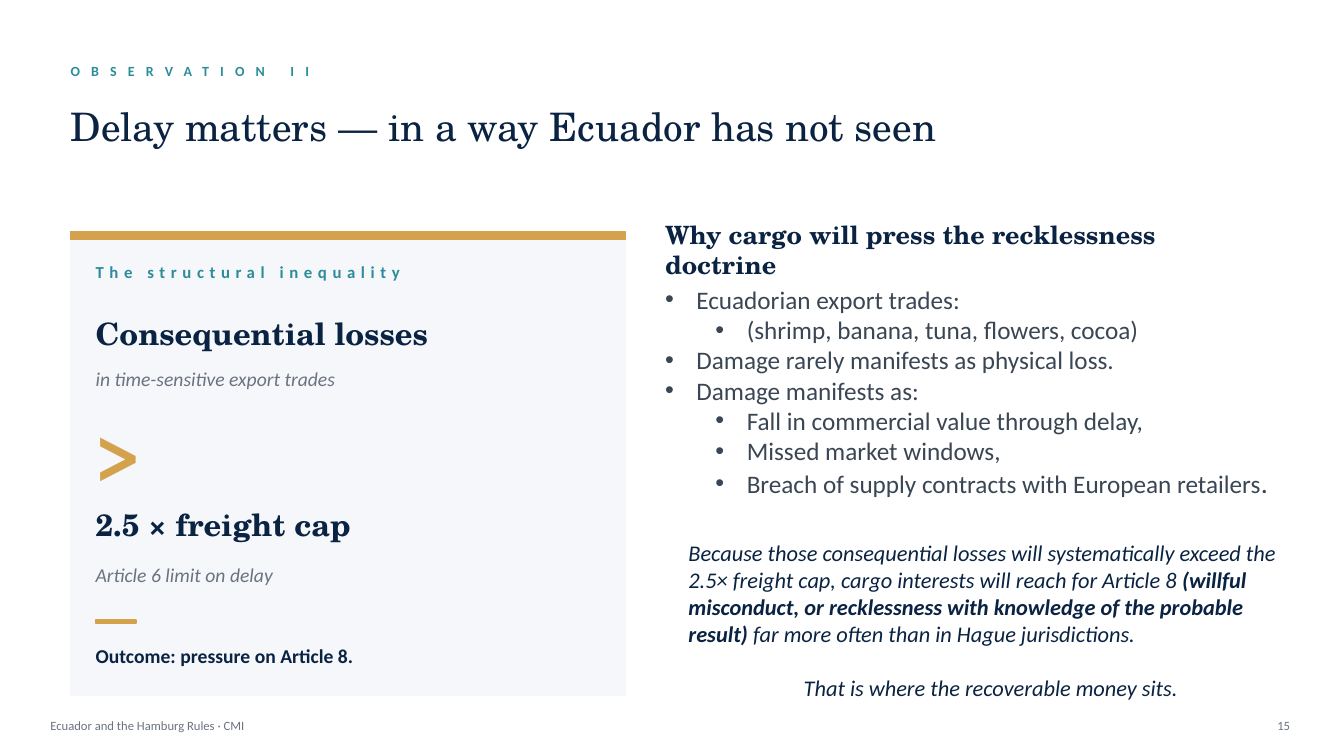
from lxml.etree import SubElement
from pptx import Presentation
from pptx.dml.color import RGBColor
from pptx.enum.shapes import MSO_SHAPE
from pptx.enum.text import MSO_ANCHOR, PP_ALIGN
from pptx.oxml.ns import qn
from pptx.util import Cm, Pt

NAVY = RGBColor(0x0A, 0x23, 0x42)
TEAL = RGBColor(0x2C, 0x8C, 0x99)
GOLD = RGBColor(0xD4, 0xA2, 0x4C)
PALE = RGBColor(0xF5, 0xF7, 0xFA)
GREY = RGBColor(0x6B, 0x72, 0x80)
SLATE = RGBColor(0x3A, 0x46, 0x54)
SERIF = "TeX Gyre Schola"
SANS = "Calibri"


def write(paragraph, text, size=14, color=NAVY, font=SANS,
          bold=False, italic=False, spacing=0):
    """Append formatted text; spacing is letter spacing in points."""
    run = paragraph.add_run()
    run.text = text
    run.font.name = font
    run.font.size = Pt(size)
    run.font.color.rgb = color
    run.font.bold = bold
    run.font.italic = italic
    if spacing:
        run.font._element.set("spc", str(spacing * 100))


class Deck:
    """Holds the current slide and the style of its elements."""

    bullet_hang = Cm(0.79)
    level_step = Cm(1.27)

    def __init__(self):
        self.presentation = Presentation()
        self.presentation.slide_width = Cm(33.87)
        self.presentation.slide_height = Cm(19.05)
        self.slide = self.presentation.slides.add_slide(
            self.presentation.slide_layouts[6])

    def frame(self, left, top, width, height, anchor=MSO_ANCHOR.TOP):
        box = self.slide.shapes.add_textbox(
            Cm(left), Cm(top), Cm(width), Cm(height))
        frame = box.text_frame
        frame.word_wrap = True
        frame.vertical_anchor = anchor
        frame.margin_left = frame.margin_right = 0
        frame.margin_top = frame.margin_bottom = 0
        return frame

    def line(self, text, left, top, width, height, align=PP_ALIGN.LEFT, **style):
        paragraph = self.frame(
            left, top, width, height, MSO_ANCHOR.MIDDLE).paragraphs[0]
        paragraph.alignment = align
        write(paragraph, text, **style)

    def block(self, left, top, width, height, color):
        block = self.slide.shapes.add_shape(
            MSO_SHAPE.RECTANGLE, Cm(left), Cm(top), Cm(width), Cm(height))
        block.shadow.inherit = False
        block.fill.solid()
        block.fill.fore_color.rgb = color
        block.line.color.rgb = color
        block.line.width = Pt(1)

    def bullets(self, items, left, top, width, height, **style):
        frame = self.frame(left, top, width, height)
        for index, (level, text) in enumerate(items):
            paragraph = frame.add_paragraph() if index else frame.paragraphs[0]
            paragraph.level = level
            properties = paragraph._p.get_or_add_pPr()
            properties.set("marL", str(self.bullet_hang + level * self.level_step))
            properties.set("indent", str(-self.bullet_hang))
            SubElement(properties, qn("a:buFont")).set("typeface", "Arial")
            SubElement(properties, qn("a:buChar")).set("char", "•")
            write(paragraph, text, **style)
        return frame

    def save(self):
        self.presentation.save("out.pptx")


def main():
    deck = Deck()

    # Heading
    deck.line("OBSERVATION II", 1.78, 1.4, 20.32, 0.76,
              size=10, color=TEAL, bold=True, spacing=8)
    deck.line("Delay matters — in a way Ecuador has not seen",
              1.78, 2.29, 30.48, 1.78, size=28, font=SERIF)

    # Inequality card
    deck.block(1.78, 5.84, 13.97, 11.68, PALE)
    deck.block(1.78, 5.84, 13.97, 0.2, GOLD)
    label = dict(size=12, color=TEAL, bold=True, spacing=4)
    term = dict(size=22, font=SERIF, bold=True)
    gloss = dict(color=GREY, italic=True)
    sign = dict(size=56, color=GOLD, font=SERIF, bold=True)
    card_lines = [
        ("The structural inequality", 6.35, 1.02, label),
        ("Consequential losses", 7.75, 1.27, term),
        ("in time-sensitive export trades", 9.02, 1.02, gloss),
        (">", 10.41, 1.78, sign),
        ("2.5 × freight cap", 12.57, 1.27, term),
        ("Article 6 limit on delay", 13.97, 1.02, gloss),
        ("Outcome: pressure on Article 8.", 15.88, 1.27, dict(bold=True)),
    ]
    for text, top, height, style in card_lines:
        deck.line(text, 2.41, top, 12.7, height, **style)
    deck.block(2.41, 15.62, 1.02, 0.08, GOLD)

    # Reasons
    deck.line("Why cargo will press the recklessness doctrine",
              16.76, 5.66, 15.24, 1.27, size=18, font=SERIF, bold=True)
    reasons = deck.bullets([
        (0, "Ecuadorian export trades:"),
        (1, "(shrimp, banana, tuna, flowers, cocoa)"),
        (0, "Damage rarely manifests as physical loss."),
        (0, "Damage manifests as:"),
        (1, "Fall in commercial value through delay,"),
        (1, "Missed market windows,"),
        (1, "Breach of supply contracts with European retailers"),
    ], 16.76, 7.16, 15.24, 4.32, size=18, color=SLATE)
    write(reasons.paragraphs[-1], ".", size=20, color=SLATE)

    # Conclusion
    conclusion = deck.frame(17.35, 13.59, 15.24, 5.08)
    argument = conclusion.paragraphs[0]
    write(argument, "Because those consequential losses will systematically "
          "exceed the 2.5× freight cap, cargo interests will reach for "
          "Article 8 ", size=16, italic=True)
    write(argument, "(willful misconduct, or recklessness with knowledge of "
          "the probable result) ", size=16, italic=True, bold=True)
    write(argument, "far more often than in Hague jurisdictions.",
          size=16, italic=True)
    closing = conclusion.add_paragraph()
    closing.alignment = PP_ALIGN.CENTER
    closing.space_before = Pt(19.5)
    write(closing, "That is where the recoverable money sits.",
          size=16, italic=True)

    # Footer
    deck.line("Ecuador and the Hamburg Rules · CMI", 1.27, 17.91, 20.32, 0.76,
              size=9, color=GREY)
    deck.line("15", 31.24, 17.91, 1.27, 0.76, align=PP_ALIGN.RIGHT,
              size=9, color=GREY)

    deck.save()


if __name__ == "__main__":
    main()
